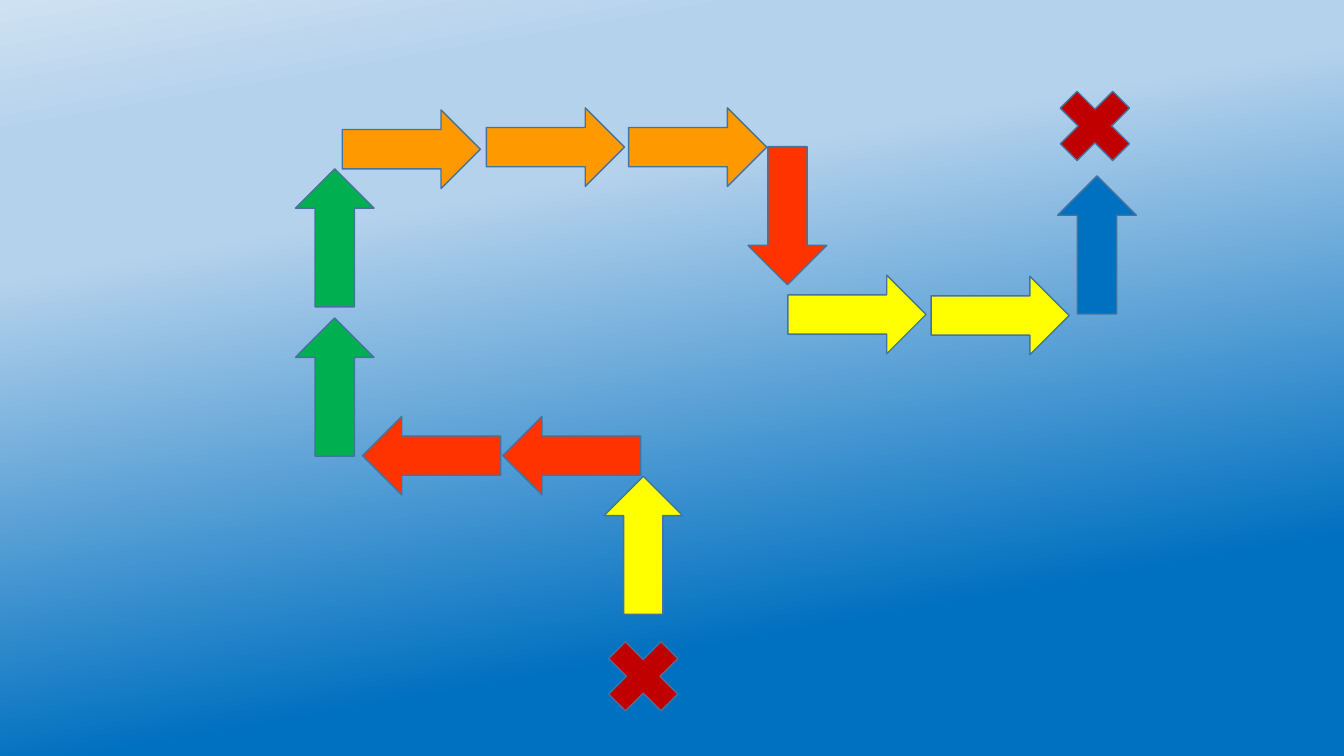
from copy import deepcopy

from pptx import Presentation
from pptx.dml.color import RGBColor
from pptx.enum.shapes import MSO_SHAPE
from pptx.oxml.ns import qn
from pptx.util import Inches, Pt

YELLOW = RGBColor(0xFF, 0xFF, 0x00)
RED = RGBColor(0xFF, 0x33, 0x00)
GREEN = RGBColor(0x00, 0xB0, 0x50)
ORANGE = RGBColor(0xFF, 0x99, 0x00)
BLUE = RGBColor(0x00, 0x70, 0xC0)
DARK_RED = RGBColor(0xC0, 0x00, 0x00)
OUTLINE = RGBColor(0x43, 0x73, 0x9E)
PALE_BLUE = RGBColor(0xB5, 0xD2, 0xEC)
PALEST_BLUE = RGBColor(0xCE, 0xE1, 0xF2)

SKY = [(22, BLUE), (72, PALE_BLUE), (86, PALE_BLUE), (100, PALEST_BLUE)]

RIGHT, DOWN, LEFT, UP = 0, 90, 180, 270
ARROW_SIZE = (1.37, 0.78)
CROSS_SIZE = (1, 1)

# Each leg: heading, colour, arrow centres in inches within the route's box
LEGS = [
    (UP, YELLOW, [(3.48, 4.71)]),
    (LEFT, RED, [(2.77, 3.82), (1.38, 3.82)]),
    (UP, GREEN, [(0.42, 3.14), (0.42, 1.66)]),
    (RIGHT, ORANGE, [(1.18, 0.78), (2.61, 0.76), (4.02, 0.76)]),
    (DOWN, RED, [(4.91, 1.44)]),
    (RIGHT, YELLOW, [(5.6, 2.42), (7.02, 2.43)]),
    (UP, BLUE, [(7.98, 1.73)]),
]
ROUTE_ENDS = [(3.48, 6.01), (7.96, 0.55)]


def paint_background(slide, stops, angle):
    """Fill with (percent, colour) stops; angle is counter-clockwise."""
    fill = slide.background.fill
    fill.gradient()
    fill.gradient_angle = angle
    stop_list = slide.background._cSld.find(".//" + qn("a:gsLst"))
    stop_list.append(deepcopy(stop_list[0]))
    stop_list.append(deepcopy(stop_list[0]))
    for stop, (percent, color) in zip(fill.gradient_stops, stops):
        stop.position = percent / 100
        stop.color.rgb = color


def add_marker(slide, kind, center, size, color, rotation=0):
    (x, y), (width, height) = center, size
    marker = slide.shapes.add_shape(
        kind, Inches(x - width / 2), Inches(y - height / 2),
        Inches(width), Inches(height))
    marker.rotation = rotation
    marker.shadow.inherit = False
    marker.fill.solid()
    marker.fill.fore_color.rgb = color
    marker.line.color.rgb = OUTLINE
    marker.line.width = Pt(1)


def add_route(slide, left, top):
    for heading, color, centers in LEGS:
        for x, y in centers:
            add_marker(slide, MSO_SHAPE.RIGHT_ARROW, (left + x, top + y),
                       ARROW_SIZE, color, heading)
    for x, y in ROUTE_ENDS:
        add_marker(slide, MSO_SHAPE.MATH_MULTIPLY, (left + x, top + y),
                   CROSS_SIZE, DARK_RED)


def main():
    deck = Presentation()
    deck.slide_width, deck.slide_height = Inches(13.33), Inches(7.5)
    slide = deck.slides.add_slide(deck.slide_layouts[6])
    paint_background(slide, SKY, angle=100)
    add_route(slide, left=2.9, top=0.7)
    deck.save("out.pptx")


if __name__ == "__main__":
    main()
